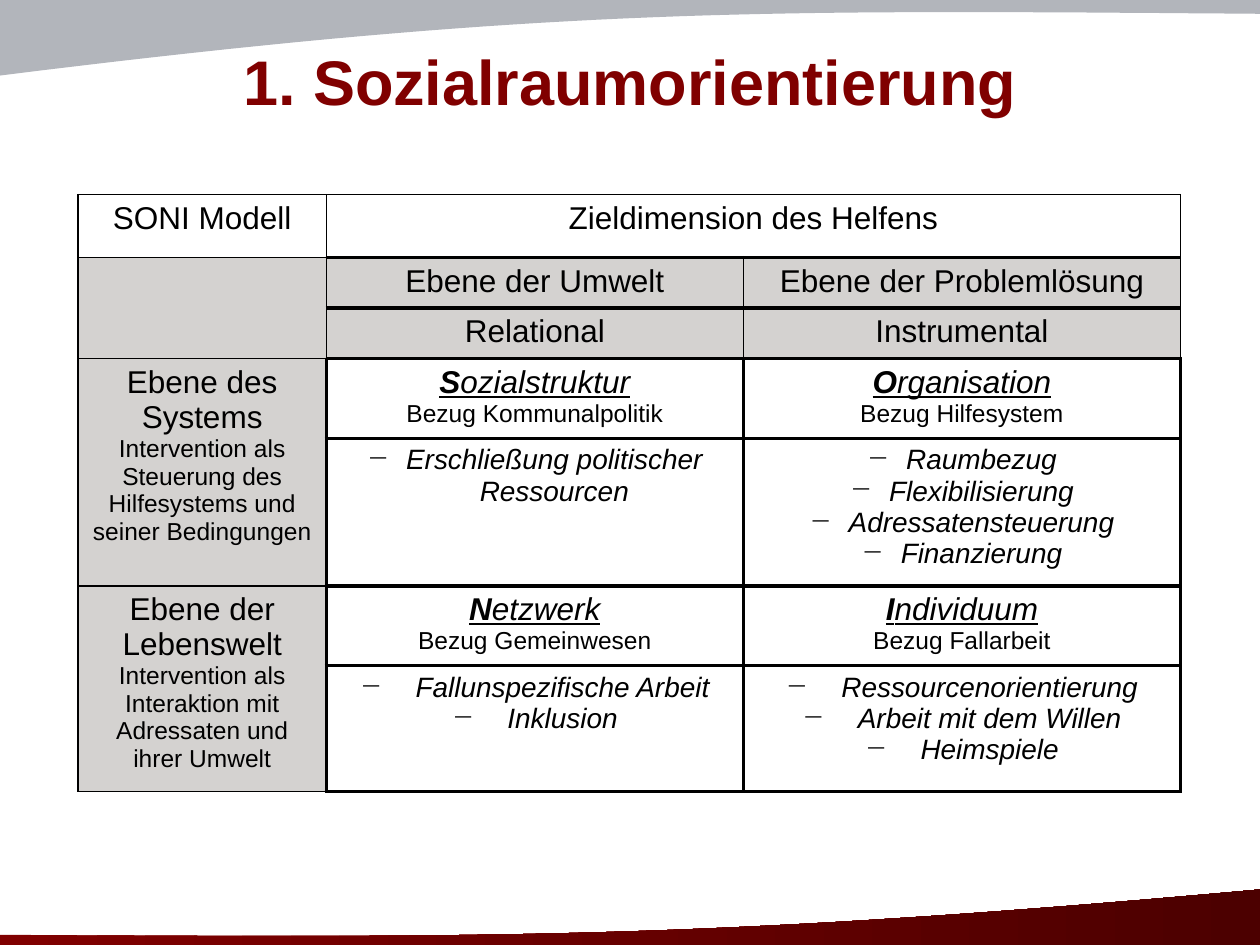
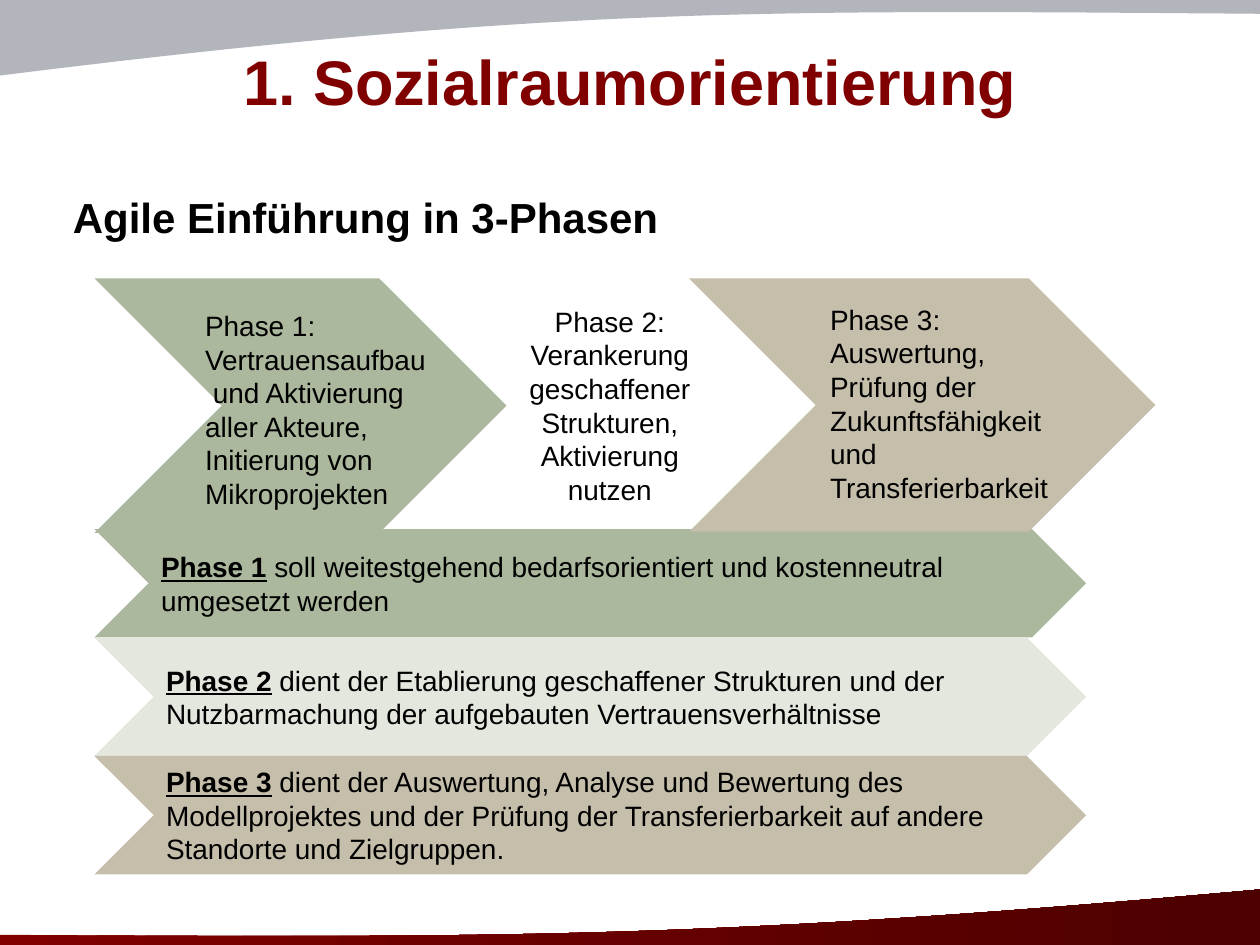
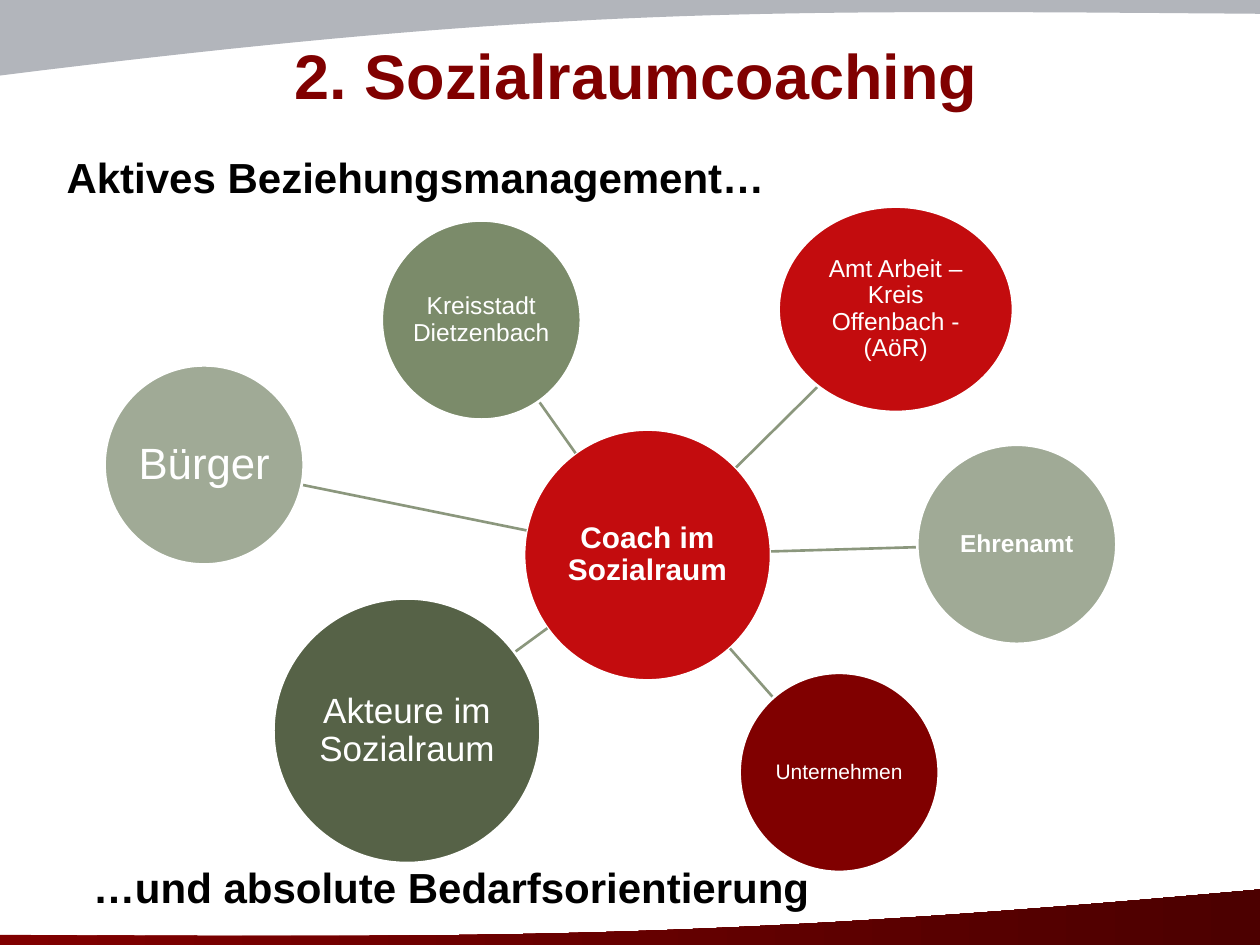
import dataclasses
import math

import lxml.etree
import pptx
import pptx.dml.color
import pptx.enum.shapes
import pptx.enum.text
import pptx.oxml.ns
import pptx.util

SHAPES = pptx.enum.shapes.MSO_SHAPE
ALIGN = pptx.enum.text.PP_ALIGN
ANCHOR = pptx.enum.text.MSO_ANCHOR
COLUMNS, ROWS = 100, 75


@dataclasses.dataclass(frozen=True)
class Theme:
    font: str = "Arial"
    black: str = "000000"
    white: str = "FFFFFF"
    maroon: str = "800000"
    dark_maroon: str = "4C0000"
    red: str = "C30C0E"
    band_gray: str = "B2B5BB"
    cell_gray: str = "D4D2D0"
    sage: str = "ACB89D"
    mist: str = "E3E7DE"
    sand: str = "C5BEAB"
    forest: str = "566247"
    olive: str = "7B8B6A"
    ash: str = "A0AA96"
    spoke: str = "8B977D"
    title_size: int = 36
    heading_size: int = 24
    cell_size: int = 18
    body_size: int = 16
    small_size: int = 14
    thin: float = 1
    thick: float = 2.25
    outline: float = 1.5


THEME = Theme()


def rgb(color):
    return pptx.dml.color.RGBColor.from_string(color)


def curve(start, first, second, end, steps=40):
    """Points along a cubic curve, without its start."""
    points = []
    for step in range(1, steps + 1):
        t = step / steps
        weights = ((1 - t) ** 3, 3 * t * (1 - t) ** 2, 3 * t * t * (1 - t), t ** 3)
        points.append(tuple(
            sum(weight * value for weight, value in zip(weights, values))
            for values in zip(start, first, second, end)))
    return points


def write(frame, text, *, size=THEME.body_size, color=THEME.black, bold=False,
          italic=False, underline=False, align=ALIGN.LEFT, spacing=None,
          hanging=None, same_line=False):
    """Add text as a new paragraph, or as a run of the last one if same_line.

    hanging is the indent in inches of a dash bullet.
    """
    paragraph = frame.paragraphs[-1]
    if not same_line:
        if paragraph.runs:
            paragraph = frame.add_paragraph()
        paragraph.alignment = align
        if spacing:
            paragraph.line_spacing = spacing
        if hanging:
            properties = paragraph._p.get_or_add_pPr()
            indent = pptx.util.Inches(hanging)
            properties.set("marL", str(indent))
            properties.set("indent", str(-indent))
            bullet = lxml.etree.SubElement(properties, pptx.oxml.ns.qn("a:buChar"))
            bullet.set("char", "−")
    run = paragraph.add_run()
    run.text = text
    font = run.font
    font.name, font.size = THEME.font, pptx.util.Pt(size)
    font.bold, font.italic, font.underline = bold, italic, underline
    font.color.rgb = rgb(color)


def set_borders(cell, widths):
    """Draw the left, right, top and bottom borders, in points."""
    properties = cell._tc.get_or_add_tcPr()
    for side, width in zip("LRTB", widths):
        line = lxml.etree.SubElement(properties, pptx.oxml.ns.qn("a:ln" + side))
        line.set("w", str(pptx.util.Pt(width)))
        fill = lxml.etree.SubElement(line, pptx.oxml.ns.qn("a:solidFill"))
        color = lxml.etree.SubElement(fill, pptx.oxml.ns.qn("a:srgbClr"))
        color.set("val", THEME.black)


@dataclasses.dataclass(frozen=True)
class Bubble:
    """An ellipse with a caption; lengths are in grid units."""
    left: float
    top: float
    width: float
    height: float
    color: str
    caption: str
    size: int = THEME.small_size
    bold: bool = False

    @property
    def center(self):
        return self.left + self.width / 2, self.top + self.height / 2

    def edge_towards(self, other):
        """The point where the line to the other centre leaves this ellipse."""
        (x, y), (other_x, other_y) = self.center, other.center
        dx, dy = other_x - x, other_y - y
        share = 1 / math.hypot(2 * dx / self.width, 2 * dy / self.height)
        return x + share * dx, y + share * dy


class Deck:
    """Draws on the current slide; places are columns and rows of the grid."""

    def __init__(self):
        self.presentation = pptx.Presentation()
        self.presentation.slide_width = pptx.util.Inches(10)
        self.presentation.slide_height = pptx.util.Inches(7.5)
        self.slide = None

    def x(self, columns):
        return round(self.presentation.slide_width * columns / COLUMNS)

    def y(self, rows):
        return round(self.presentation.slide_height * rows / ROWS)

    def box(self, left, top, width, height):
        return self.x(left), self.y(top), self.x(width), self.y(height)

    def new_slide(self, title, left=13.8, top=2.9):
        self.slide = self.presentation.slides.add_slide(
            self.presentation.slide_layouts[6])
        footer = self.outline([(COLUMNS, 70.6)] + curve(
            (COLUMNS, 70.6), (55.9, 74.6), (39.1, 74.4), (0, 74.2))
            + [(0, ROWS), (COLUMNS, ROWS)])
        footer.fill.gradient()
        footer.fill.gradient_angle = 0
        for stop, color in zip(footer.fill.gradient_stops,
                               (THEME.maroon, THEME.dark_maroon)):
            stop.color.rgb = rgb(color)
        header = self.outline([(0, 6)] + curve(
            (0, 6), (44, 0.5), (60.8, 0.8), (COLUMNS, 1.1))
            + [(COLUMNS, 0), (0, 0)])
        header.fill.solid()
        header.fill.fore_color.rgb = rgb(THEME.band_gray)
        write(self.text_box(left, top, 72.4, 7.1), title, size=THEME.title_size,
              color=THEME.maroon, bold=True, align=ALIGN.CENTER)

    def outline(self, points):
        start, *others = [(self.x(x), self.y(y)) for x, y in points]
        builder = self.slide.shapes.build_freeform(*start)
        builder.add_line_segments(others)
        shape = builder.convert_to_shape()
        shape.shadow.inherit = False
        shape.line.fill.background()
        return shape

    def text_box(self, *place):
        frame = self.slide.shapes.add_textbox(*self.box(*place)).text_frame
        frame.word_wrap = True
        return frame

    def heading(self, text, left, top):
        write(self.text_box(left, top, 90.4, 5), text,
              size=THEME.heading_size, bold=True)

    def shape(self, kind, *place, color=None, line=None):
        """Add a preset shape and return it; without color it has no fill."""
        shape = self.slide.shapes.add_shape(kind, *self.box(*place))
        shape.shadow.inherit = False
        if color:
            shape.fill.solid()
            shape.fill.fore_color.rgb = rgb(color)
        else:
            shape.fill.background()
        if line:
            shape.line.color.rgb = rgb(line)
            shape.line.width = pptx.util.Pt(THEME.outline)
        else:
            shape.line.fill.background()
        shape.text_frame.word_wrap = True
        shape.text_frame.vertical_anchor = ANCHOR.MIDDLE
        return shape

    def chevron(self, *place, color=None):
        return self.shape(SHAPES.CHEVRON, *place, color=color).text_frame

    def bubble(self, bubble):
        frame = self.shape(SHAPES.OVAL, bubble.left, bubble.top, bubble.width,
                           bubble.height, color=bubble.color,
                           line=THEME.white).text_frame
        frame.margin_left = frame.margin_right = pptx.util.Inches(0.01)
        frame.margin_top = frame.margin_bottom = pptx.util.Inches(0.01)
        write(frame, bubble.caption, size=bubble.size, bold=bubble.bold,
              color=THEME.white, align=ALIGN.CENTER, spacing=0.9)

    def spoke(self, hub, bubble):
        (x1, y1), (x2, y2) = hub.edge_towards(bubble), bubble.edge_towards(hub)
        connector = self.slide.shapes.add_connector(
            pptx.enum.shapes.MSO_CONNECTOR.STRAIGHT,
            self.x(x1), self.y(y1), self.x(x2), self.y(y2))
        connector.line.color.rgb = rgb(THEME.spoke)
        connector.line.width = pptx.util.Pt(THEME.outline)
        lxml.etree.SubElement(connector._element.spPr,
                              pptx.oxml.ns.qn("a:effectLst"))

    def table(self, left, top, widths, heights):
        table = self.slide.shapes.add_table(
            len(heights), len(widths),
            *self.box(left, top, sum(widths), sum(heights))).table
        table.first_row = table.horz_banding = False
        for column, width in zip(table.columns, widths):
            column.width = self.x(width)
        for row, height in zip(table.rows, heights):
            row.height = self.y(height)
        return table


def style_soni_cell(cell, row, column):
    thin, thick = THEME.thin, THEME.thick
    if column == 0:
        widths = (thin, thick if row > 2 else thin, thin, thin)
    elif row == 0:
        widths = (thin, thin, thin, thick)
    elif row < 3:
        widths = (thin, thin, thick, thick)
    else:
        widths = (thick,) * 4
    set_borders(cell, widths)
    if row > 0 and (column == 0 or row < 3):
        cell.fill.solid()
        cell.fill.fore_color.rgb = rgb(THEME.cell_gray)
    else:
        cell.fill.background()


def soni_slide(deck):
    deck.new_slide("1. Sozialraumorientierung")
    table = deck.table(6.2, 15.45, (19.7, 33.1, 34.7), (5, 4, 4, 6.3, 11.7, 6.3, 10))
    for row in range(7):
        for column in range(3):
            style_soni_cell(table.cell(row, column), row, column)
    table.cell(0, 1).merge(table.cell(0, 2))
    for row in (1, 3, 5):
        table.cell(row, 0).merge(table.cell(row + 1, 0))

    def fill_cell(row, column, text, **style):
        write(table.cell(row, column).text_frame, text, align=ALIGN.CENTER, **style)

    headers = {
        (0, 0): "SONI Modell", (0, 1): "Zieldimension des Helfens",
        (1, 1): "Ebene der Umwelt", (1, 2): "Ebene der Problemlösung",
        (2, 1): "Relational", (2, 2): "Instrumental",
        (3, 0): "Ebene des Systems", (5, 0): "Ebene der Lebenswelt"}
    for (row, column), text in headers.items():
        fill_cell(row, column, text, size=THEME.cell_size)
    fill_cell(3, 0, "Intervention als Steuerung des Hilfesystems und seiner "
              "Bedingungen", size=THEME.small_size)
    fill_cell(5, 0, "Intervention als Interaktion mit Adressaten und ihrer Umwelt",
              size=THEME.small_size)

    fields = (
        (3, 1, "Sozialstruktur", "Bezug Kommunalpolitik", 0.31,
         ["Erschließung politischer Ressourcen"]),
        (3, 2, "Organisation", "Bezug Hilfesystem", 0.31,
         ["Raumbezug", "Flexibilisierung", "Adressatensteuerung", "Finanzierung"]),
        (5, 1, "Netzwerk", "Bezug Gemeinwesen", 0.44,
         ["Fallunspezifische Arbeit", "Inklusion"]),
        (5, 2, "Individuum", "Bezug Fallarbeit", 0.44,
         ["Ressourcenorientierung", "Arbeit mit dem Willen", "Heimspiele"]))
    for row, column, name, reference, hanging, items in fields:
        name_style = dict(size=THEME.cell_size, italic=True, underline=True)
        fill_cell(row, column, name[0], bold=True, **name_style)
        fill_cell(row, column, name[1:], same_line=True, **name_style)
        fill_cell(row, column, reference, size=THEME.small_size)
        for item in items:
            fill_cell(row + 1, column, item, italic=True, hanging=hanging)


def phases_slide(deck):
    deck.new_slide("1. Sozialraumorientierung")
    deck.heading("Agile Einführung in 3-Phasen", 4.8, 14.7)
    bars = (
        (42, 8.6, THEME.sage, "Phase 1", "soll weitestgehend bedarfsorientiert "
         "und kostenneutral umgesetzt werden"),
        (50.6, 9.4, THEME.mist, "Phase 2", "dient der Etablierung geschaffener "
         "Strukturen und der Nutzbarmachung der aufgebauten Vertrauensverhältnisse"),
        (60, 9.4, THEME.sand, "Phase 3", "dient der Auswertung, Analyse und "
         "Bewertung des Modellprojektes und der Prüfung der Transferierbarkeit "
         "auf andere Standorte und Zielgruppen."))
    for top, height, color, phase, purpose in bars:
        frame = deck.chevron(7.5, top, 78.7, height, color=color)
        write(frame, phase, bold=True, underline=True)
        write(frame, " " + purpose, same_line=True)

    deck.chevron(54.7, 22.1, 37, 20.1, color=THEME.sand)
    deck.chevron(7.5, 22.1, 32.7, 20.2, color=THEME.sage)
    first = deck.text_box(15.3, 24, 20, 19.9)
    write(first, "Phase 1: Vertrauensaufbau")
    write(first, " und Aktivierung aller Akteure, Initierung von Mikroprojekten")
    write(deck.chevron(30, 22.1, 36.8, 20.1),
          "Phase 2: Verankerung geschaffener Strukturen, Aktivierung nutzen",
          align=ALIGN.CENTER)
    write(deck.text_box(64.9, 23.5, 20, 17.2),
          "Phase 3: Auswertung, Prüfung der Zukunftsfähigkeit und "
          "Transferierbarkeit")


def coaching_slide(deck):
    deck.new_slide("2. Sozialraumcoaching", left=14.3, top=2.4)
    deck.heading("Aktives Beziehungsmanagement…", 4.3, 11.5)
    coach = Bubble(41.6, 34.1, 19.6, 19.9, THEME.red, "Coach im Sozialraum",
                   size=17, bold=True)
    partners = (
        Bubble(21.7, 47.5, 21.2, 21, THEME.forest, "Akteure im Sozialraum", size=20),
        Bubble(61.8, 16.4, 18.6, 16.3, THEME.red,
               "Amt Arbeit – Kreis Offenbach - (AöR)"),
        Bubble(72.8, 35.3, 15.8, 15.8, THEME.ash, "Ehrenamt", bold=True),
        Bubble(58.7, 53.4, 15.8, 15.8, THEME.maroon, "Unternehmen", size=12),
        Bubble(8.3, 29, 15.8, 15.8, THEME.ash, "Bürger", size=25),
        Bubble(30.3, 17.5, 15.8, 15.8, THEME.olive, "Kreisstadt Dietzenbach"))
    deck.bubble(coach)
    for partner in partners:
        deck.spoke(coach, partner)
        deck.bubble(partner)
    deck.heading("…und absolute Bedarfsorientierung", 6.4, 67.9)


def main():
    deck = Deck()
    soni_slide(deck)
    phases_slide(deck)
    coaching_slide(deck)
    deck.presentation.save("out.pptx")


if __name__ == "__main__":
    main()
